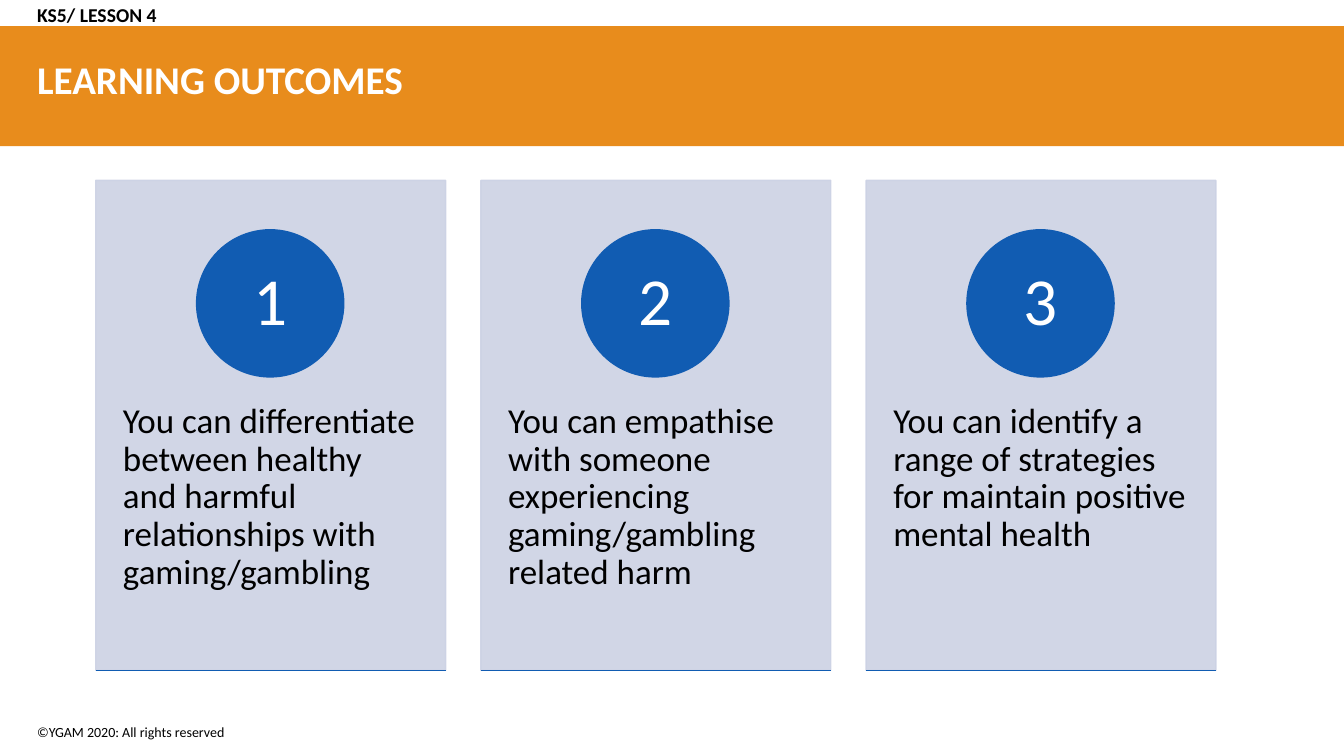
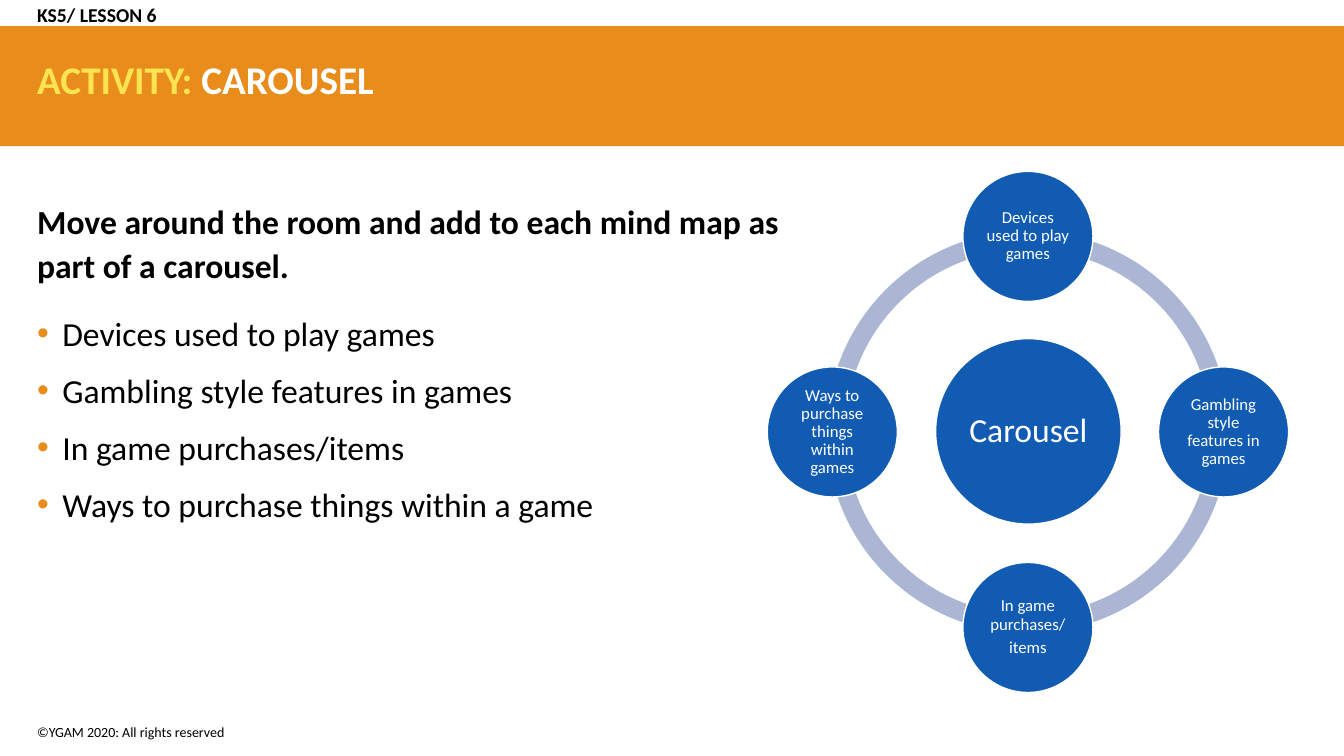
import lxml.etree
import pptx
import pptx.dml.color
import pptx.enum.shapes
import pptx.enum.text
import pptx.oxml.ns
import pptx.util

RGBColor = pptx.dml.color.RGBColor
SHAPE = pptx.enum.shapes.MSO_SHAPE
ALIGN = pptx.enum.text.PP_ALIGN
ANCHOR = pptx.enum.text.MSO_ANCHOR
qn = pptx.oxml.ns.qn

PX = 9144
FONT = "Calibri"
ORANGE = RGBColor(0xE8, 0x8C, 0x1C)
BLUE = RGBColor(0x11, 0x5C, 0xB2)
LAVENDER = RGBColor(0xCC, 0xD2, 0xE4)
RING = RGBColor(0xAB, 0xB6, 0xD5)
YELLOW = RGBColor(0xFF, 0xE4, 0x52)
WHITE = RGBColor(0xFF, 0xFF, 0xFF)
BLACK = RGBColor(0x00, 0x00, 0x00)


def add_box(s, kind, left, top, width, height, fill=None, line=None):
    rect = [v * PX for v in (left, top, width, height)]
    if kind is None:
        return s.shapes.add_textbox(*rect)
    sp = s.shapes.add_shape(kind, *rect)
    sp.shadow.inherit = False
    sp.fill.solid()
    sp.fill.fore_color.rgb = fill
    if line is None:
        sp.line.fill.background()
    else:
        sp.line.color.rgb = line
        sp.line.width = pptx.util.Pt(1)
    return sp


def write(sp, lines, size, color, bold=False, align=ALIGN.LEFT,
          anchor=ANCHOR.MIDDLE, spacing=0.9, insets=(10, 5, 10, 5)):
    tf = sp.text_frame
    tf.word_wrap = True
    tf.vertical_anchor = anchor
    tf.margin_left, tf.margin_top, tf.margin_right, tf.margin_bottom = [v * PX for v in insets]
    for i, line in enumerate(lines):
        p = tf.add_paragraph() if i else tf.paragraphs[0]
        p.text = line
        p.alignment = align
        p.line_spacing = spacing
        p.font.name = FONT
        p.font.size = pptx.util.Pt(size)
        p.font.bold = bold
        p.font.color.rgb = color
    return tf


prs = pptx.Presentation()
prs.slide_width = 1333 * PX
prs.slide_height = 750 * PX

headings = [
    ("KS5/ LESSON 4", [("LEARNING OUTCOMES", WHITE)]),
    ("KS5/ LESSON 6", [("ACTIVITY: ", YELLOW), ("CAROUSEL", WHITE)]),
]
for lesson, title in headings:
    s = prs.slides.add_slide(prs.slide_layouts[6])
    add_box(s, SHAPE.RECTANGLE, 0, 26, 1333, 119, ORANGE)
    write(add_box(s, None, 27, 711, 564, 31), ["©YGAM 2020: All rights reserved"], 10, BLACK, spacing=1.0)
    tf = write(add_box(s, None, 27, 38, 1276, 87), [""], 28, WHITE, bold=True)
    for text, color in title:
        r = tf.paragraphs[0].add_run()
        r.text = text
        r.font.color.rgb = color
    write(add_box(s, None, 27, 0, 586, 32), [lesson], 14, BLACK, bold=True, insets=(10, 0, 10, 0))

outcomes_slide, carousel_slide = prs.slides

s = outcomes_slide
outcomes = [
    "You can differentiate between healthy and harmful relationships with gaming/gambling",
    "You can empathise with someone experiencing gaming/gambling related harm",
    "You can identify a range of strategies for maintain positive mental health",
]
for i, outcome in enumerate(outcomes):
    left = 95 + i * 382
    card = add_box(s, SHAPE.RECTANGLE, left, 179, 347, 486, LAVENDER, LAVENDER)
    for clr in card._element.spPr.iter(qn("a:srgbClr")):
        lxml.etree.SubElement(clr, qn("a:alpha"), val="90000")
    write(add_box(s, None, left, 380, 347, 276), [outcome], 25, BLACK,
          anchor=ANCHOR.TOP, insets=(27, 20, 27, 20))
    number = add_box(s, SHAPE.OVAL, left + 100, 228, 146, 146, BLUE, BLUE)
    write(number, [str(i + 1)], 48, WHITE, align=ALIGN.CENTER, insets=(11, 1, 11, 1))
    base = s.shapes.add_connector(pptx.enum.shapes.MSO_CONNECTOR.STRAIGHT,
                                  left * PX, 665 * PX, (left + 347) * PX, 665 * PX)
    base.line.color.rgb = BLUE
    base.line.width = pptx.util.Pt(1)
    lxml.etree.SubElement(base._element.spPr, qn("a:effectLst"))

s = carousel_slide
tasks = [
    "Move around the room and add to each mind map as part of a carousel.",
    "Devices used to play games",
    "Gambling style features in games",
    "In game purchases/items",
    "Ways to purchase things within a game",
]
body = add_box(s, None, 27, 192, 783, 345)
tf = write(body, tasks, 24, BLACK, anchor=ANCHOR.TOP, spacing=1.07)
tf.paragraphs[0].font.bold = True
tf.paragraphs[0].space_after = pptx.util.Pt(8)
for p in tf.paragraphs[1:]:
    p.space_before = pptx.util.Pt(10)
    pPr = p._p.get_or_add_pPr()
    pPr.set("marL", str(25 * PX))
    pPr.set("indent", str(-25 * PX))
    bullet_color = lxml.etree.Element(qn("a:buClr"))
    lxml.etree.SubElement(bullet_color, qn("a:srgbClr"), val=str(ORANGE))
    bullet_font = lxml.etree.Element(qn("a:buFont"), typeface="Arial")
    bullet = lxml.etree.Element(qn("a:buChar"), char="•")
    for element in (bullet_color, bullet_font, bullet):
        pPr.find(qn("a:defRPr")).addprevious(element)

for start in range(0, 216, 54):
    arc = add_box(s, SHAPE.BLOCK_ARC, 820, 229, 399, 399, RING)
    for i, value in enumerate((start, (start + 54) % 216, 0.046)):
        arc.adjustments[i] = value

hub = add_box(s, SHAPE.OVAL, 928, 336, 184, 184, BLUE, WHITE)
write(hub, ["Carousel"], 24, WHITE, align=ALIGN.CENTER, insets=(3, 3, 3, 3))

stations = [
    (0, -1, ["Devices used to play games"]),
    (1, 0, ["Gambling style features in games"]),
    (0, 1, ["In game purchases/", "items"]),
    (-1, 0, ["Ways to purchase things within games"]),
]
for dx, dy, lines in stations:
    station = add_box(s, SHAPE.OVAL, 955 + dx * 194, 364 + dy * 194, 129, 129, BLUE, WHITE)
    tf = write(station, lines, 12, WHITE, align=ALIGN.CENTER, insets=(2, 0, 2, 0))
    for p in tf.paragraphs[1:]:
        p.space_before = pptx.util.Pt(4)

prs.save("out.pptx")
